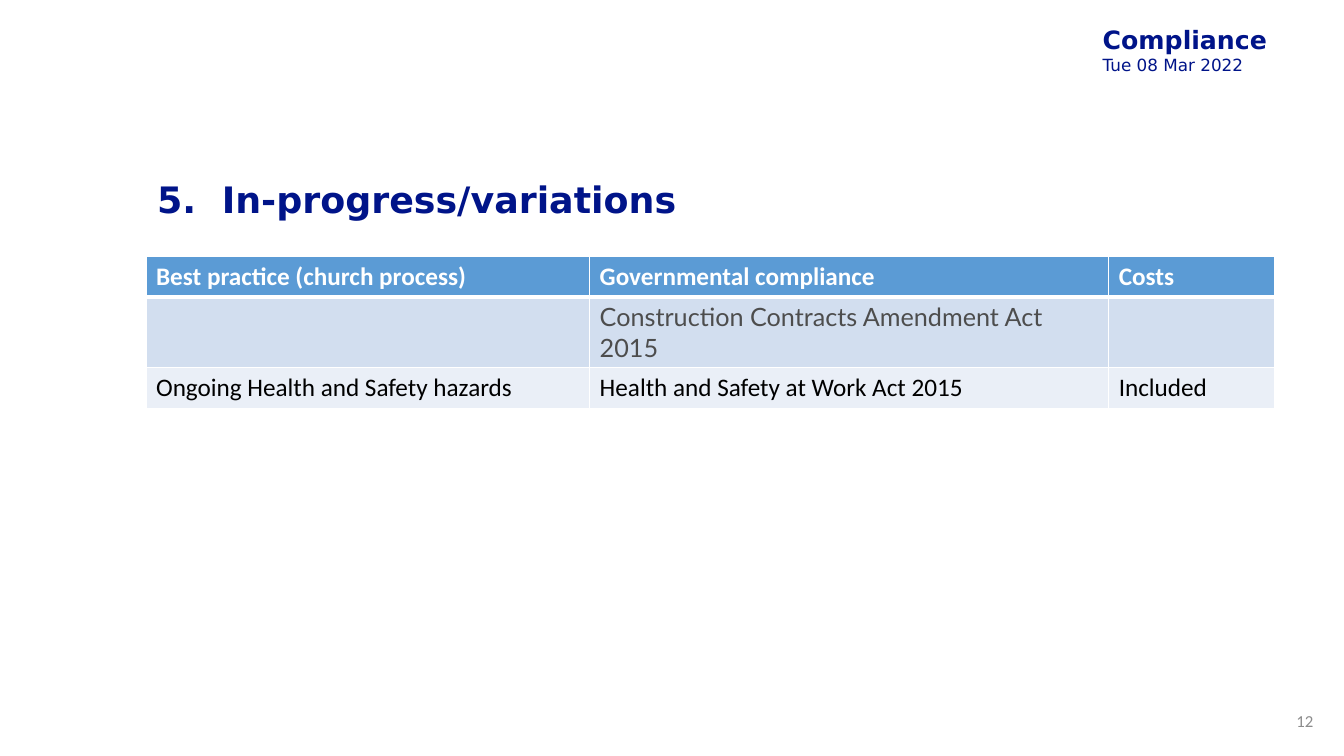
from lxml.etree import SubElement as Sub
from pptx import Presentation
from pptx.dml.color import RGBColor
from pptx.enum.text import MSO_ANCHOR as Anchor, PP_ALIGN as Align
from pptx.oxml.ns import qn
from pptx.util import Cm, Pt


def style(para, size, face, color, bold=False):
    for run in para.runs:
        font = run.font
        font.size, font.name, font.bold = Pt(size), face, bold
        font.color.rgb = RGBColor.from_string(color)


def label(left, top, width, height, text, anchor=Anchor.MIDDLE):
    box = slide.shapes.add_textbox(Cm(left), Cm(top), Cm(width), Cm(height))
    frame = box.text_frame
    frame.text = text
    frame.word_wrap = True
    frame.vertical_anchor = anchor
    return frame


NAVY = "001489"
SANS = "DejaVu Sans"

deck = Presentation()
deck.slide_width, deck.slide_height = Cm(33.87), Cm(19.05)
slide = deck.slides.add_slide(deck.slide_layouts[6])

head = label(27.61, 0.51, 4.55, 2.24, "Compliance\nTue 08 Mar 2022", Anchor.TOP)
head.word_wrap = False
head.margin_left = head.margin_right = Cm(0.18)
head.margin_top = head.margin_bottom = Cm(0.1)
style(head.paragraphs[0], 18, SANS, NAVY, True)
style(head.paragraphs[1], 12, SANS, NAVY)

title = label(3.71, 3.81, 28.45, 2.57, "5.\tIn-progress/variations").paragraphs[0]
tabs = Sub(title._p.get_or_add_pPr(), qn("a:tabLst"))
Sub(tabs, qn("a:tab"), pos=str(Cm(1.63)), algn="l")
title.line_spacing = 0.9
style(title, 26, SANS, NAVY, True)

rows = [
    ("Best practice (church process)", "Governmental compliance", "Costs"),
    ("", "Construction Contracts Amendment Act 2015", ""),
    ("Ongoing Health and Safety hazards", "Health and Safety at Work Act 2015", "Included"),
]
looks = [
    ("5B9BD5", "Calibri", "FFFFFF", True),
    ("D2DEEF", "Lato", "4D4D4D", False),
    ("EAEFF7", "Calibri", "000000", False),
]
grid = slide.shapes.add_table(3, 3, Cm(3.68), Cm(6.45), Cm(28.45), Cm(3.1)).table
for col, width in zip(grid.columns, (11.18, 13.08, 4.19)):
    col.width = Cm(width)

for r, (texts, look) in enumerate(zip(rows, looks)):
    fill, face, color, bold = look
    grid.rows[r].height = Cm(1.03)
    for c, text in enumerate(texts):
        cell = grid.cell(r, c)
        cell.text = text
        style(cell.text_frame.paragraphs[0], 18, face, color, bold)
        props = cell._tc.get_or_add_tcPr()
        for side in "LRTB":
            thick = (r, side) in ((0, "B"), (1, "T"))
            line = Sub(props, qn("a:ln" + side), w=str(Pt(3 if thick else 1)))
            Sub(Sub(line, qn("a:solidFill")), qn("a:srgbClr"), val="FFFFFF")
        cell.fill.solid()
        cell.fill.fore_color.rgb = RGBColor.from_string(fill)

page = label(32.28, 17.65, 1.07, 1.02, "12").paragraphs[0]
page.alignment = Align.RIGHT
style(page, 12, "Calibri", "8C8C8C")

deck.save("out.pptx")
